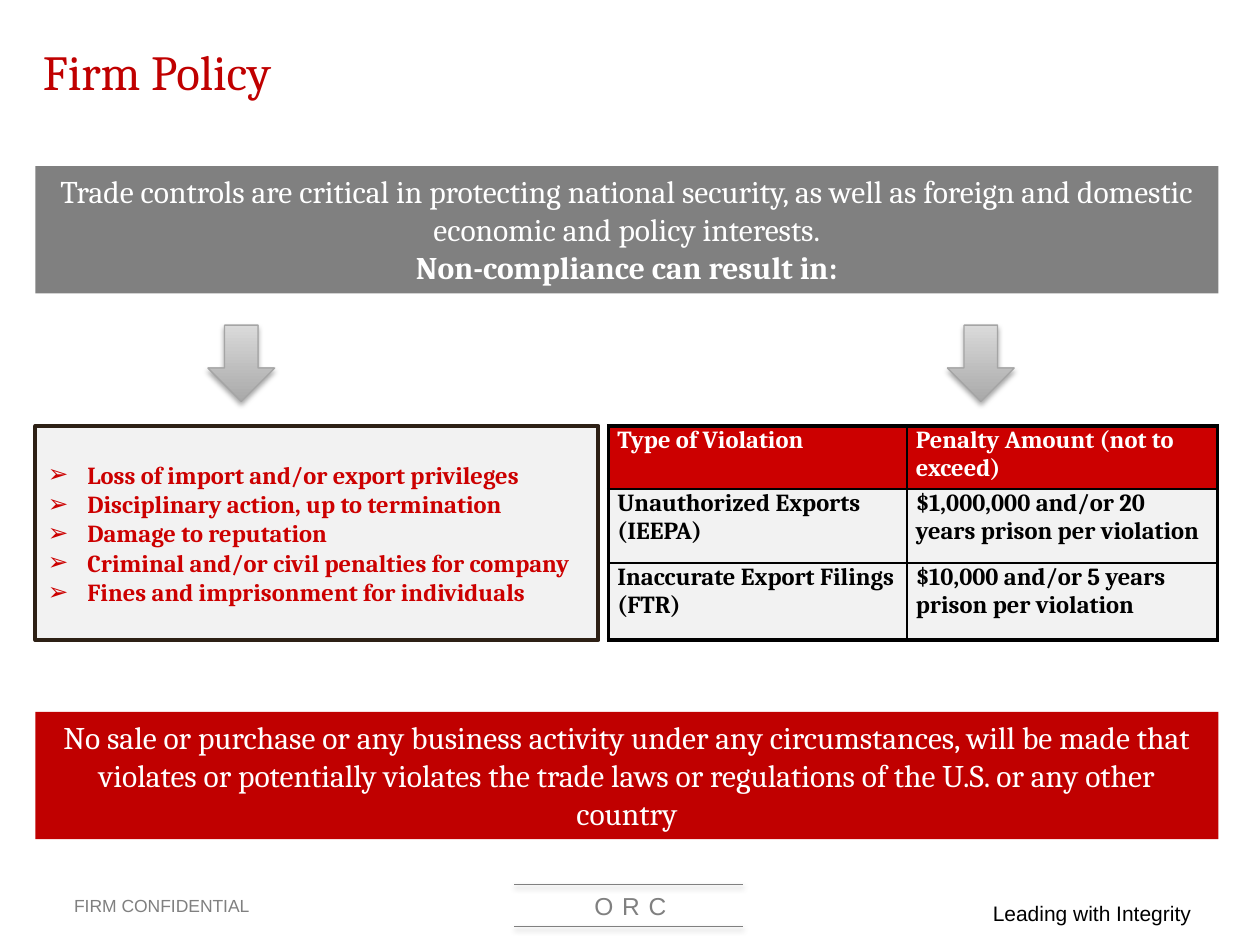
from dataclasses import dataclass

from lxml import etree
from pptx import Presentation
from pptx.dml.color import RGBColor
from pptx.enum.shapes import MSO_CONNECTOR, MSO_SHAPE
from pptx.enum.text import MSO_ANCHOR, MSO_AUTO_SIZE, PP_ALIGN
from pptx.oxml.ns import qn
from pptx.util import Pt

LEFT, CENTER = PP_ALIGN.LEFT, PP_ALIGN.CENTER
TOP, MIDDLE = MSO_ANCHOR.TOP, MSO_ANCHOR.MIDDLE
NO_AUTOSIZE = MSO_AUTO_SIZE.NONE
RECTANGLE, DOWN_ARROW = MSO_SHAPE.RECTANGLE, MSO_SHAPE.DOWN_ARROW
STRAIGHT = MSO_CONNECTOR.STRAIGHT


@dataclass(frozen=True)
class Theme:
    serif: str = "Cambria"
    sans: str = "Arial"
    red: str = "C00000"
    bright_red: str = "CC0000"
    gray: str = "808080"
    pale: str = "F2F2F2"
    brown: str = "2D2015"
    arrow_dark: str = "A9A9A9"
    arrow_light: str = "DADADA"
    arrow_line: str = "A5A5A5"
    white: str = "FFFFFF"
    black: str = "000000"
    title: float = 28
    banner: float = 18
    body: float = 14
    motto: float = 12
    footer: float = 10


THEME = Theme()

PENALTIES = [
    ["Type of Violation", "Penalty Amount (not to exceed)"],
    ["Unauthorized Exports (IEEPA)", "$1,000,000 and/or 20 years prison per violation"],
    ["Inaccurate Export Filings (FTR)", "$10,000 and/or 5 years prison per violation"],
]
CONSEQUENCES = [
    "Loss of import and/or export privileges",
    "Disciplinary action, up to termination",
    "Damage to reputation",
    "Criminal and/or civil penalties for company",
    "Fines and imprisonment for individuals",
]


def rgb(color):
    return RGBColor.from_string(color)


def points(box):
    return [Pt(length) for length in box]


def add_child(parent, tag, **attributes):
    return etree.SubElement(parent, qn(tag), {name: str(value) for name, value in attributes.items()})


def write(frame, lines, font=THEME.serif, size=THEME.body, color=THEME.black, bold=False,
          align=LEFT, anchor=TOP, bullet=None, spacing=None, bold_last=False, wrap=True):
    frame.word_wrap = wrap
    frame.vertical_anchor = anchor
    for index, line in enumerate(lines):
        para = frame.paragraphs[0] if index == 0 else frame.add_paragraph()
        para.alignment = align
        para.space_before = Pt(0)
        if bullet:
            properties = para._p.get_or_add_pPr()
            properties.set("marL", str(Pt(22.5)))
            properties.set("indent", str(-Pt(22.5)))
            add_child(properties, "a:buFont", typeface=THEME.sans)
            add_child(properties, "a:buChar", char=bullet)
        span = para.add_run()
        span.text = line
        span.font.name = font
        span.font.size = Pt(size)
        span.font.bold = bold or (bold_last and index == len(lines) - 1)
        span.font.color.rgb = rgb(color)
        if spacing:
            span.font._element.set("spc", str(spacing * 100))


def add_text(page, box, line, **text_format):
    text_box = page.shapes.add_textbox(*points(box))
    write(text_box.text_frame, [line], **text_format)


def set_shadow(shape, opacity=None):
    effects = add_child(shape.element.spPr, "a:effectLst")
    if opacity:
        shadow = add_child(effects, "a:outerShdw", blurRad=Pt(3.1), dist=Pt(1.8),
                           dir=90 * 60000, rotWithShape=0)
        color = add_child(shadow, "a:srgbClr", val=THEME.black)
        add_child(color, "a:alpha", val=opacity * 1000)


def add_title(page, box, line):
    title = page.shapes.title
    title.left, title.top, title.width, title.height = points(box)
    write(title.text_frame, [line], size=THEME.title, color=THEME.red, anchor=MIDDLE)
    title.text_frame.auto_size = NO_AUTOSIZE


def add_banner(page, box, lines, fill, **text_format):
    banner = page.shapes.add_shape(RECTANGLE, *points(box))
    banner.fill.solid()
    banner.fill.fore_color.rgb = rgb(fill)
    banner.line.fill.background()
    set_shadow(banner)
    write(banner.text_frame, lines, size=THEME.banner, color=THEME.white,
          align=CENTER, **text_format)


def add_arrow(page, box):
    arrow = page.shapes.add_shape(DOWN_ARROW, *points(box))
    arrow.fill.gradient()
    arrow.fill.gradient_angle = 90
    for stop, position, color in zip(arrow.fill.gradient_stops, (0, 1),
                                     (THEME.arrow_dark, THEME.arrow_light)):
        stop.position = position
        stop.color.rgb = rgb(color)
    arrow.line.color.rgb = rgb(THEME.arrow_line)
    arrow.line.width = Pt(0.75)
    set_shadow(arrow, opacity=35)


def add_consequences(page, box, lines):
    panel = page.placeholders[1]
    panel.left, panel.top, panel.width, panel.height = points(box)
    panel.fill.solid()
    panel.fill.fore_color.rgb = rgb(THEME.pale)
    panel.line.color.rgb = rgb(THEME.brown)
    panel.line.width = Pt(2.25)
    frame = panel.text_frame
    frame.auto_size = NO_AUTOSIZE
    frame.margin_right = 0
    write(frame, lines, color=THEME.bright_red, bold=True, anchor=MIDDLE, bullet="➢")


def set_borders(cell, widths):
    properties = cell._tc.get_or_add_tcPr()
    for side, width in zip("LRTB", widths):
        line = add_child(properties, f"a:ln{side}", w=Pt(width))
        add_child(add_child(line, "a:solidFill"), "a:srgbClr", val=THEME.black)


def add_penalties(page, box, rows):
    outer, inner = 2.25, 1.5
    column_widths, row_heights = (170.6, 177.4), (36, 42.5, 43.9)
    table = page.shapes.add_table(len(rows), len(rows[0]), *points(box)).table
    for column, width in zip(table.columns, column_widths):
        column.width = Pt(width)
    for row, height in zip(table.rows, row_heights):
        row.height = Pt(height)
    last_row, last_column = len(rows) - 1, len(rows[0]) - 1
    for y, row in enumerate(rows):
        for x, line in enumerate(row):
            cell = table.cell(y, x)
            edges = (x == 0, x == last_column, y == 0, y == last_row)
            set_borders(cell, [outer if edge else inner for edge in edges])
            cell.fill.solid()
            cell.fill.fore_color.rgb = rgb(THEME.pale if y else THEME.bright_red)
            cell.margin_left = cell.margin_right = Pt(5)
            cell.margin_top = cell.margin_bottom = 0
            write(cell.text_frame, [line], bold=True, color=THEME.black if y else THEME.white)


def add_footer(page, box):
    left, top, width, height = box
    add_text(page, (left + 35.3, top + 2.2, 117.4, 19.4), "FIRM CONFIDENTIAL",
             font=THEME.sans, size=THEME.footer, color=THEME.gray, anchor=MIDDLE)
    add_text(page, (left + 285.8, top, 149, height), "ORC", font=THEME.sans,
             color=THEME.gray, align=CENTER, spacing=5)
    for y in (top, top + height):
        rule = page.shapes.add_connector(STRAIGHT, *points((left + 293.8, y, left + 424.8, y)))
        rule.line.color.rgb = rgb(THEME.gray)
        rule.line.width = Pt(0.5)
        set_shadow(rule, opacity=38)
    add_text(page, (left + 560.2, top + 5.8, 128.9, 21.6), "Leading with Integrity",
             font=THEME.sans, size=THEME.motto, wrap=False)


def main():
    deck = Presentation()
    deck.slide_width, deck.slide_height = Pt(720), Pt(540)
    page = deck.slides.add_slide(deck.slide_layouts[1])
    left, width, banner_height = 20.2, 676, 72.7
    add_footer(page, (0, 505.4, 720, 23.8))
    add_title(page, (17.3, 6.5, 536.4, 68.4), "Firm Policy")
    add_penalties(page, (347.8, 243.4, 348, 122.4), PENALTIES)
    add_banner(page, (left, 95, width, banner_height), [
        "Trade controls are critical in protecting national security, as well as foreign "
        "and domestic economic and policy interests.",
        "Non-compliance can result in:",
    ], THEME.gray, bold_last=True)
    add_banner(page, (left, 406.8, width, banner_height), [
        "No sale or purchase or any business activity under any circumstances, will be made "
        "that violates or potentially violates the trade laws or regulations of the U.S. "
        "or any other country",
    ], THEME.red)
    for arrow_left in (118.8, 541.4):
        add_arrow(page, (arrow_left, 185.8, 38.2, 43.6))
    add_consequences(page, (left, 243.4, 321.8, 122.4), CONSEQUENCES)
    deck.save("out.pptx")


if __name__ == "__main__":
    main()
